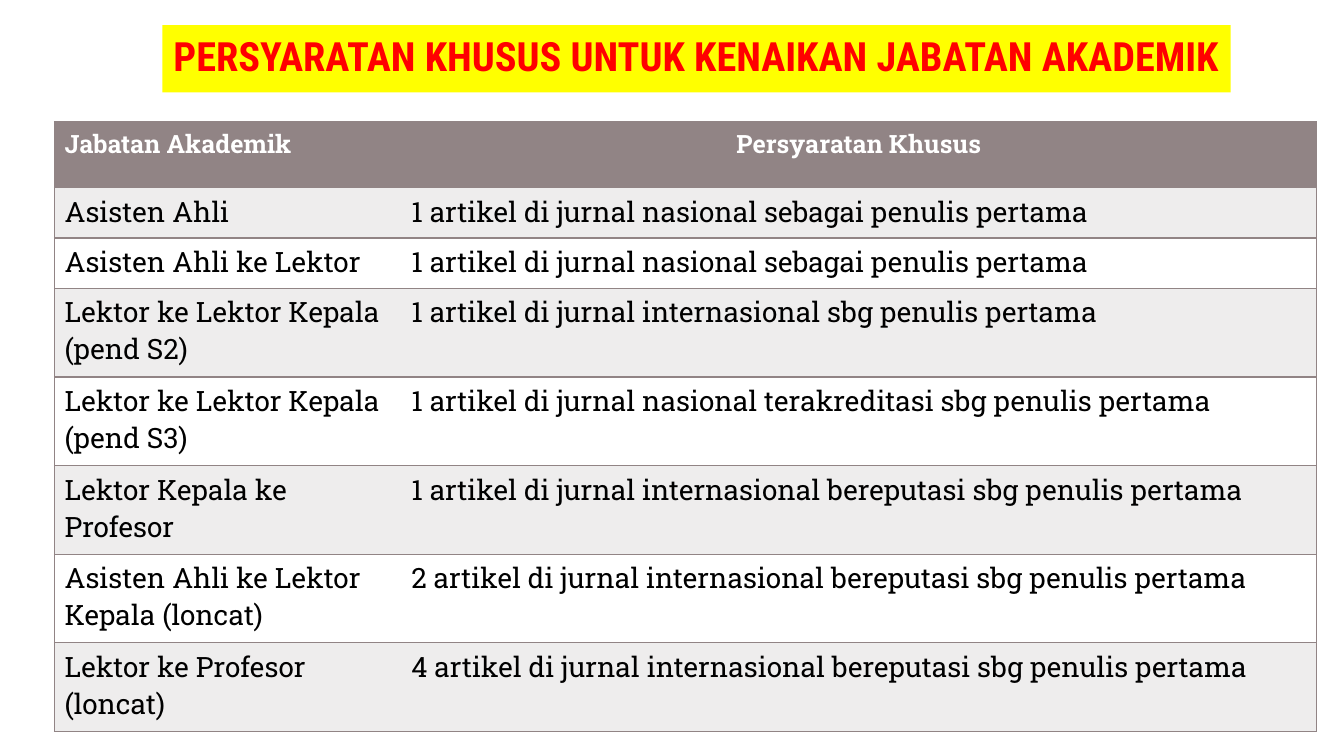
from typing import NamedTuple

from lxml import etree
from pptx import Presentation, util as u
from pptx.dml.color import RGBColor
from pptx.enum import text
from pptx.oxml import ns

COLORS = {
    "title": "FF0000",
    "highlight": "FFFF00",
    "header": "918485",
    "band": "EEEDED",
    "white": "FFFFFF",
    "body": "000000",
}
TITLE_FONT = "Roboto Condensed"
TABLE_FONT = "Roboto Slab"
COLUMN_WIDTHS = (247.7, 653.8)
HEADER_HEIGHT = 47


class Requirement(NamedTuple):
    position: str
    condition: str
    height: float


SINGLE, DOUBLE = 36, 63.3
REQUIREMENTS = (
    Requirement("Asisten Ahli", "1 artikel di jurnal nasional sebagai penulis pertama", SINGLE),
    Requirement("Asisten Ahli ke Lektor",
                "1 artikel di jurnal nasional sebagai penulis pertama", SINGLE),
    Requirement("Lektor ke Lektor Kepala (pend S2)",
                "1 artikel di jurnal internasional sbg penulis pertama", DOUBLE),
    Requirement("Lektor ke Lektor Kepala (pend S3)",
                "1 artikel di jurnal nasional terakreditasi sbg penulis pertama", DOUBLE),
    Requirement("Lektor Kepala ke Profesor",
                "1 artikel di jurnal internasional bereputasi sbg penulis pertama", DOUBLE),
    Requirement("Asisten Ahli ke Lektor Kepala (loncat)",
                "2 artikel di jurnal internasional bereputasi sbg penulis pertama", DOUBLE),
    Requirement("Lektor ke Profesor (loncat)",
                "4 artikel di jurnal internasional bereputasi sbg penulis pertama", DOUBLE),
)


def color(name: str) -> RGBColor:
    return RGBColor.from_string(COLORS[name])


def write_text(frame, content: str, *, font: str, size: float, color_name: str,
               bold: bool = False, align=text.PP_ALIGN.LEFT, line_spacing: float = 1.0) -> None:
    paragraph = frame.paragraphs[0]
    paragraph.alignment = align
    paragraph.line_spacing = line_spacing
    run = paragraph.add_run()
    run.text = content
    run.font.name = font
    run.font.size = u.Pt(size)
    run.font.bold = bold
    run.font.color.rgb = color(color_name)


def set_borders(cell, sides: str) -> None:
    """Draw the sides named by letters out of L, R, T, B and hide the others."""
    properties = cell._tc.get_or_add_tcPr()
    for index, side in enumerate("LRTB"):
        line = etree.Element(ns.qn(f"a:ln{side}"), w=str(u.Pt(1)))
        if side in sides:
            fill = etree.SubElement(line, ns.qn("a:solidFill"))
            etree.SubElement(fill, ns.qn("a:srgbClr"), val=COLORS["header"])
        else:
            etree.SubElement(line, ns.qn("a:noFill"))
        properties.insert(index, line)


def add_title(slide) -> None:
    title = slide.shapes.title
    title.left, title.top = u.Pt(116), u.Pt(18)
    title.width, title.height = u.Pt(763), u.Pt(48)
    title.fill.solid()
    title.fill.fore_color.rgb = color("highlight")
    frame = title.text_frame
    frame.word_wrap = False
    frame.auto_size = text.MSO_AUTO_SIZE.NONE
    frame.vertical_anchor = text.MSO_ANCHOR.MIDDLE
    write_text(frame, "PERSYARATAN KHUSUS UNTUK KENAIKAN JABATAN AKADEMIK",
               font=TITLE_FONT, size=28.8, color_name="title", bold=True,
               align=text.PP_ALIGN.CENTER, line_spacing=0.9)


def add_requirements_table(slide) -> None:
    rows = (Requirement("Jabatan Akademik", "Persyaratan Khusus", HEADER_HEIGHT), *REQUIREMENTS)
    table = slide.shapes.add_table(
        len(rows), len(COLUMN_WIDTHS), u.Pt(38.9), u.Pt(87),
        u.Pt(sum(COLUMN_WIDTHS)), u.Pt(sum(row.height for row in rows))).table
    table.horz_banding = False
    for column, width in zip(table.columns, COLUMN_WIDTHS):
        column.width = u.Pt(width)
    for row_index, row in enumerate(rows):
        table.rows[row_index].height = u.Pt(row.height)
        is_header = row_index == 0
        fill_name = "header" if is_header else "band" if row_index % 2 else "white"
        for column_index, content in enumerate((row.position, row.condition)):
            cell = table.cell(row_index, column_index)
            cell.fill.solid()
            cell.fill.fore_color.rgb = color(fill_name)
            set_borders(cell, ("LTB", "RTB")[column_index])
            centered = is_header and column_index == 1
            write_text(cell.text_frame, content, font=TABLE_FONT,
                       size=18 if is_header else 20,
                       color_name="white" if is_header else "body", bold=is_header,
                       align=text.PP_ALIGN.CENTER if centered else text.PP_ALIGN.LEFT)


def main() -> None:
    presentation = Presentation()
    presentation.slide_width, presentation.slide_height = u.Pt(960), u.Pt(540)
    slide = presentation.slides.add_slide(presentation.slide_layouts.get_by_name("Title Only"))
    add_title(slide)
    add_requirements_table(slide)
    presentation.save("out.pptx")


if __name__ == "__main__":
    main()
